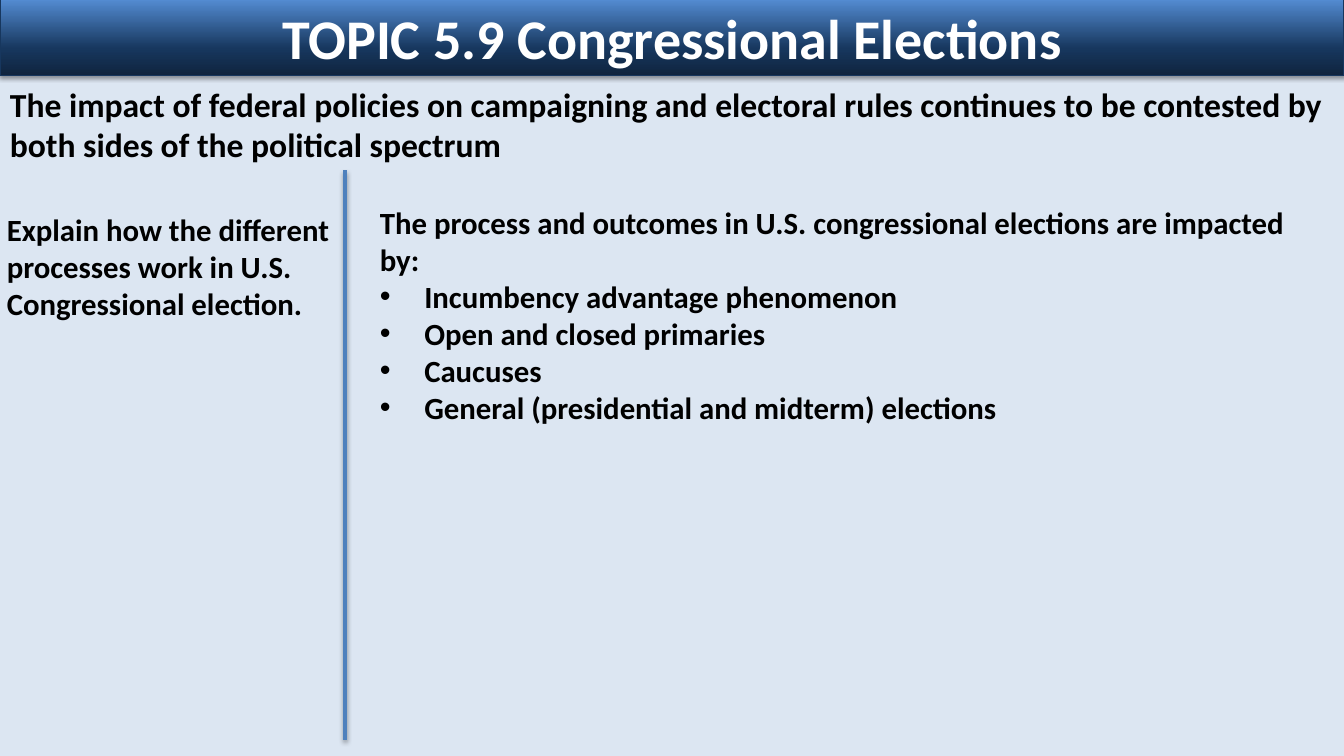
from dataclasses import dataclass

from lxml import etree
from pptx import Presentation
from pptx.dml.color import RGBColor
from pptx.enum.shapes import MSO_CONNECTOR
from pptx.enum.text import MSO_ANCHOR, MSO_AUTO_SIZE, PP_ALIGN
from pptx.oxml.ns import qn
from pptx.util import Emu, Inches, Pt

STRAIGHT = MSO_CONNECTOR.STRAIGHT
TOP = MSO_ANCHOR.TOP
NO_FIT = MSO_AUTO_SIZE.NONE
LEFT, CENTER = PP_ALIGN.LEFT, PP_ALIGN.CENTER
WIDTH, HEIGHT = Inches(13.33), Inches(7.5)
TITLE_ONLY = 5
BULLET_INDENT = Inches(0.44)
BANNER_STOPS = ((0, "0F243E"), (35, "17375E"), (100, "558ED5"))


@dataclass(frozen=True)
class Area:
    """Position and size as percentages of the slide."""
    left: float
    top: float
    width: float
    height: float


@dataclass(frozen=True)
class Passage:
    area: Area
    size: int
    lead: str
    bullets: tuple[str, ...] = ()


BANNER = Area(0, -0.27, 100, 10.27)
DIVIDER = Area(25.65, 22.53, 0, 75.34)
PASSAGES = (
    Passage(
        Area(27.53, 26.27, 71.85, 30.93), 22,
        "The process and outcomes in U.S. congressional elections are impacted by:",
        (
            "Incumbency advantage phenomenon",
            "Open and closed primaries",
            "Caucuses",
            "General (presidential and midterm) elections",
        ),
    ),
    Passage(
        Area(0, 10.4, 100, 12.13), 24,
        "The impact of federal policies on campaigning and electoral rules "
        "continues to be contested by both sides of the political spectrum",
    ),
    Passage(
        Area(-0.23, 27.2, 26.48, 16.13), 22,
        "Explain how the different processes work in U.S. Congressional election.",
    ),
)


def color(value: str) -> RGBColor:
    return RGBColor.from_string(value)


def across(percent: float) -> Emu:
    return Emu(round(WIDTH * percent / 100))


def down(percent: float) -> Emu:
    return Emu(round(HEIGHT * percent / 100))


def bounds(area: Area) -> tuple[Emu, Emu, Emu, Emu]:
    return across(area.left), down(area.top), across(area.width), down(area.height)


def write(paragraph, text: str, *, size: int, ink: str = "000000",
          align=LEFT, bullet: bool = False) -> None:
    paragraph.alignment = align
    run = paragraph.add_run()
    run.text = text
    run.font.name = "Calibri"
    run.font.size = Pt(size)
    run.font.bold = True
    run.font.color.rgb = color(ink)
    if bullet:
        properties = paragraph._p.get_or_add_pPr()
        properties.set("marL", str(BULLET_INDENT))
        properties.set("indent", str(-BULLET_INDENT))
        etree.SubElement(properties, qn("a:buFont"), typeface="Arial")
        etree.SubElement(properties, qn("a:buChar"), char="•")


def add_shadow(part, distance: float, opacity: int) -> None:
    effects = etree.SubElement(part._element.spPr, qn("a:effectLst"))
    shadow = etree.SubElement(
        effects, qn("a:outerShdw"), blurRad=str(Pt(3.1)), dist=str(Pt(distance)),
        dir="5400000", rotWithShape="0")
    black = etree.SubElement(shadow, qn("a:srgbClr"), val="000000")
    etree.SubElement(black, qn("a:alpha"), val=str(opacity * 1000))


def draw_banner(slide) -> None:
    banner = slide.shapes.title
    banner.left, banner.top, banner.width, banner.height = bounds(BANNER)
    banner.fill.gradient()
    banner.fill.gradient_angle = 90
    stops = banner._element.spPr.find(qn("a:gradFill")).find(qn("a:gsLst"))
    for stop in list(stops):
        stops.remove(stop)
    for position, shade in BANNER_STOPS:
        stop = etree.SubElement(stops, qn("a:gs"), pos=str(position * 1000))
        etree.SubElement(stop, qn("a:srgbClr"), val=shade)
    banner.line.color.rgb = color("17375E")
    banner.line.width = Pt(0.75)
    add_shadow(banner, 1.6, 38)
    frame = banner.text_frame
    frame.auto_size = NO_FIT
    frame.vertical_anchor = TOP
    write(frame.paragraphs[0], "TOPIC 5.9 Congressional Elections",
          size=40, ink="FFFFFF", align=CENTER)


def draw_divider(slide) -> None:
    left, top, width, height = bounds(DIVIDER)
    divider = slide.shapes.add_connector(
        STRAIGHT, left, top, left + width, top + height)
    divider.line.color.rgb = color("4F81BD")
    divider.line.width = Pt(3)
    add_shadow(divider, 1.8, 35)


def draw_passage(slide, passage: Passage) -> None:
    frame = slide.shapes.add_textbox(*bounds(passage.area)).text_frame
    frame.word_wrap = True
    write(frame.paragraphs[0], passage.lead, size=passage.size)
    for bullet in passage.bullets:
        write(frame.add_paragraph(), bullet, size=passage.size, bullet=True)


def main() -> None:
    deck = Presentation()
    deck.slide_width, deck.slide_height = WIDTH, HEIGHT
    slide = deck.slides.add_slide(deck.slide_layouts[TITLE_ONLY])
    slide.background.fill.solid()
    slide.background.fill.fore_color.rgb = color("DCE6F2")
    draw_banner(slide)
    draw_divider(slide)
    for passage in PASSAGES:
        draw_passage(slide, passage)
    deck.save("out.pptx")


if __name__ == "__main__":
    main()
